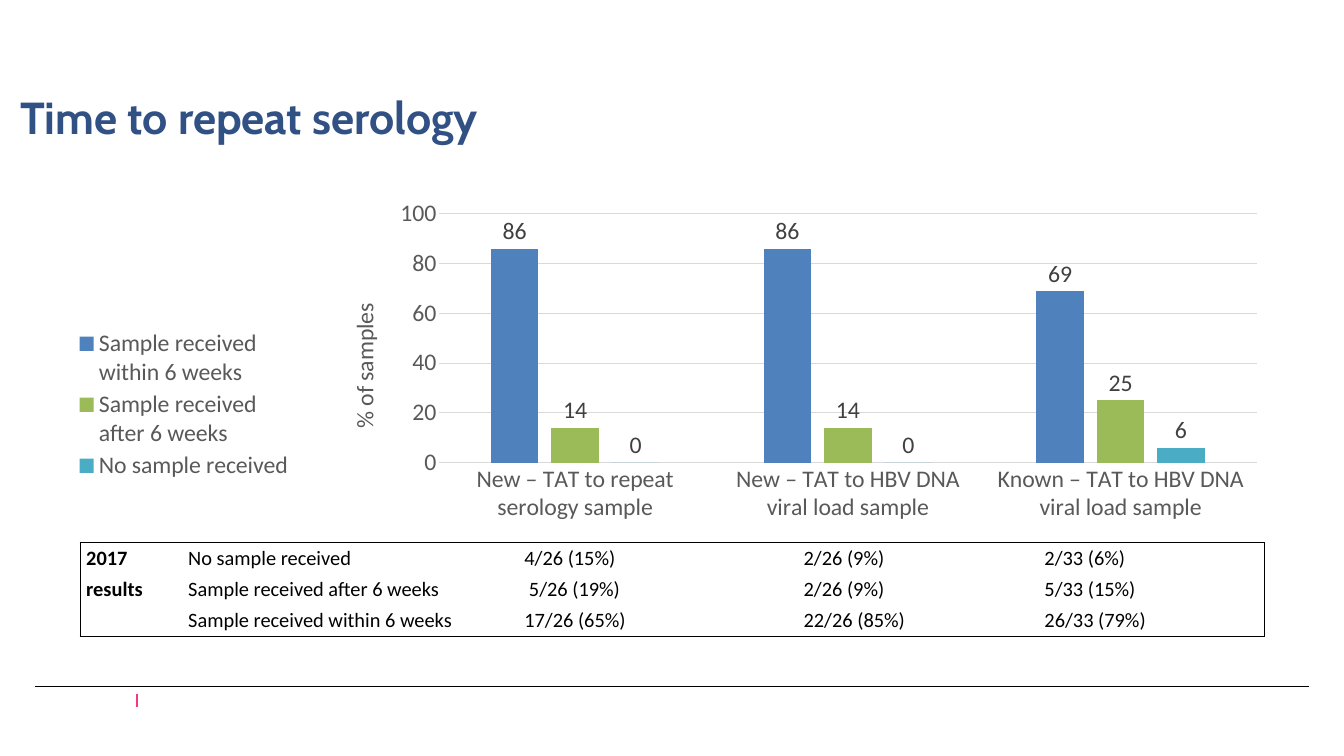
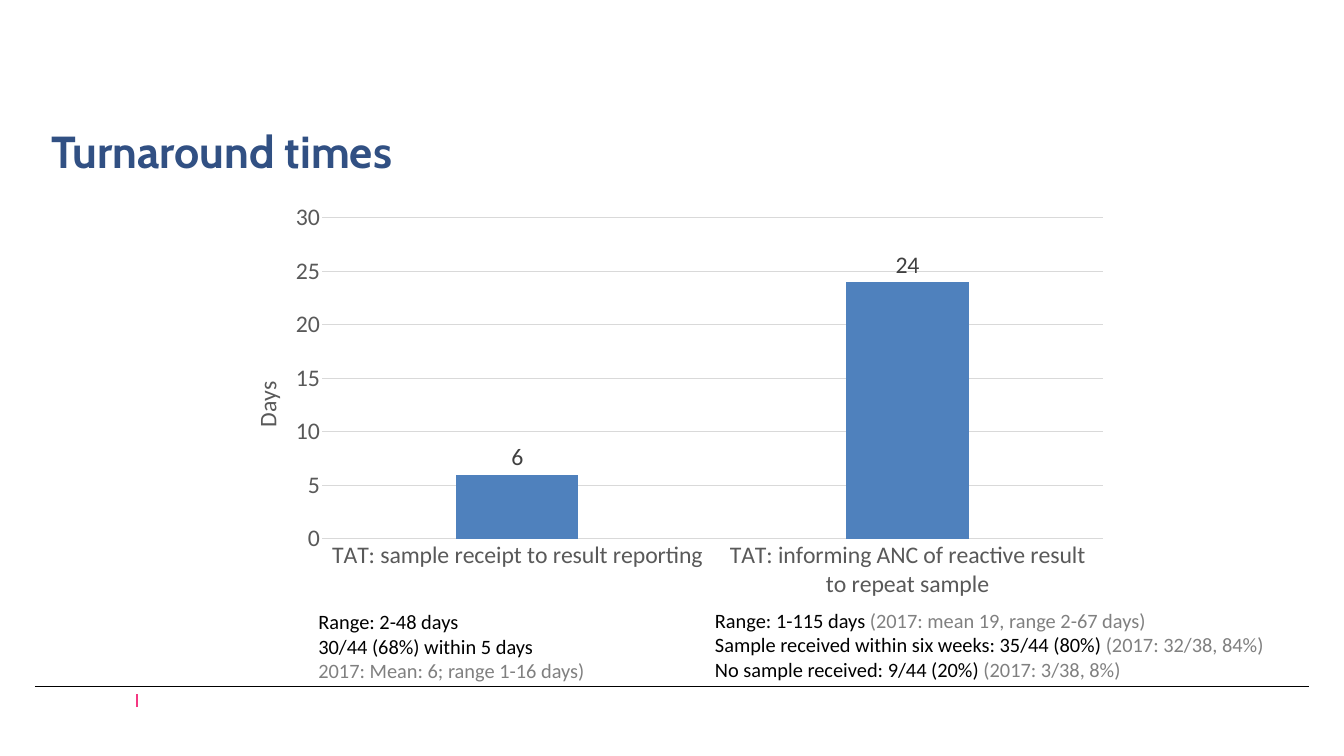
from lxml import etree
from pptx import Presentation
from pptx.chart.data import CategoryChartData
from pptx.dml.color import RGBColor
from pptx.enum.chart import XL_CHART_TYPE, XL_LABEL_POSITION, XL_LEGEND_POSITION, XL_TICK_MARK
from pptx.enum.shapes import MSO_CONNECTOR
from pptx.enum.text import MSO_ANCHOR, MSO_AUTO_SIZE, PP_ALIGN
from pptx.oxml import parse_xml
from pptx.oxml.ns import nsdecls, qn
from pptx.util import Inches, Pt

COLUMN_CHART = XL_CHART_TYPE.COLUMN_CLUSTERED
OUTSIDE_END = XL_LABEL_POSITION.OUTSIDE_END
LEGEND_LEFT = XL_LEGEND_POSITION.LEFT
NO_TICKS = XL_TICK_MARK.NONE
STRAIGHT = MSO_CONNECTOR.STRAIGHT
TOP = MSO_ANCHOR.TOP
NO_AUTOFIT = MSO_AUTO_SIZE.NONE
LEFT = PP_ALIGN.LEFT

COLORS = {
    "title": "315083", "black": "000000", "white": "FFFFFF", "pink": "F43882",
    "axis": "595959", "label": "404040", "grid": "D9D9D9", "past": "808080",
    "blue": "4F81BD", "green": "9BBB59", "teal": "4BACC6",
}
RGB = {name: RGBColor.from_string(value) for name, value in COLORS.items()}
TITLE_FONT, BODY_FONT = "Cabin", "Calibri"
TITLE_SIZE, CHART_SIZE, TEXT_SIZE = 52.8, 28, 24

deck = Presentation()
deck.slide_width, deck.slide_height = Inches(21.99), Inches(12.37)
# The grid has 100 columns and 100 rows; every place below is in these units.
COL, ROW = deck.slide_width / 100, deck.slide_height / 100
TITLE_ONLY = deck.slide_layouts[5]


def style_font(font, size, color, bold=False, name=BODY_FONT):
    font.name, font.size, font.bold = name, Pt(size), bold
    font.color.rgb = RGB[color]


def place_in_chart(element, **shares):
    """Give a chart part a fixed place, as shares of the chart's size."""
    for old in element.findall(qn("c:layout")):
        element.remove(old)
    target = '<c:layoutTarget val="inner"/>' if element.tag == qn("c:plotArea") else ""
    modes = "".join(f'<c:{axis}Mode val="edge"/>' for axis in "xy")
    values = "".join(f'<c:{key} val="{value}"/>' for key, value in shares.items())
    layout = parse_xml(f'<c:layout {nsdecls("c")}><c:manualLayout>{target}{modes}{values}'
                       "</c:manualLayout></c:layout>")
    overlay = element.find(qn("c:overlay"))
    if overlay is None:
        element.insert(0, layout)
    else:
        overlay.addprevious(layout)


FOOTER_LINES = [
    ((2.59, 90.7), (97.36, 90.7), "black", 0.41),
    ((10.19, 93.53), (10.19, 91.84), "pink", 1.65),
]
SLIDES = [
    {
        "title": "Time to repeat serology",
        "title_at": (1.5, 11.8, 98.32, 16.57),
        "chart_at": (4.5, 25.79, 91.68, 50.93),
        "categories": ["New – TAT to repeat serology sample",
                       "New – TAT to HBV DNA viral load sample",
                       "Known – TAT to HBV DNA viral load sample"],
        "series": [("Sample received within 6 weeks", (86, 86, 69), "blue"),
                   ("Sample received after 6 weeks", (14, 14, 25), "green"),
                   ("No sample received", (0, 0, 6), "teal")],
        "axis": ("% of samples", 100, 20),
        "axis_title_at": {"x": 0.23, "y": 0.27},
        "plot_at": {"x": 0.307, "y": 0.049, "w": 0.664, "h": 0.646},
        "legend_at": {"x": 0.01, "y": 0.34, "w": 0.18, "h": 0.41},
    },
    {
        "title": "Turnaround times",
        "title_at": (3.82, 16.33, 89.5, 13.58),
        "chart_at": (16.64, 25.79, 66.67, 54.41),
        "categories": ["TAT: sample receipt to result reporting",
                       "TAT: informing ANC of reactive result to repeat sample"],
        "series": [("Series 1", (6, 24), "blue")],
        "axis": ("Days", 30, 5),
        "axis_title_at": {"x": 0.026, "y": 0.443},
        "plot_at": {"x": 0.11, "y": 0.055, "w": 0.871, "h": 0.781},
        "legend_at": None,
    },
]

pages = []
for content in SLIDES:
    page = deck.slides.add_slide(TITLE_ONLY)
    pages.append(page)

    for (x1, y1), (x2, y2), color, width in FOOTER_LINES:
        line = page.shapes.add_connector(STRAIGHT, int(x1 * COL), int(y1 * ROW),
                                         int(x2 * COL), int(y2 * ROW))
        line.line.color.rgb, line.line.width = RGB[color], Pt(width)
        etree.SubElement(line._element.spPr, qn("a:effectLst"))

    title = page.shapes.title
    left, top, width, height = content["title_at"]
    title.left, title.top = int(left * COL), int(top * ROW)
    title.width, title.height = int(width * COL), int(height * ROW)
    frame = title.text_frame
    frame.text = content["title"]
    frame.margin_left = frame.margin_top = frame.margin_right = frame.margin_bottom = 0
    frame.vertical_anchor, frame.auto_size, frame.word_wrap = TOP, NO_AUTOFIT, True
    frame.paragraphs[0].alignment = LEFT
    style_font(frame.paragraphs[0].runs[0].font, TITLE_SIZE, "title", True, TITLE_FONT)

    data = CategoryChartData()
    data.categories = content["categories"]
    for name, values, color in content["series"]:
        data.add_series(name, values)
    left, top, width, height = content["chart_at"]
    chart = page.shapes.add_chart(COLUMN_CHART, int(left * COL), int(top * ROW),
                                  int(width * COL), int(height * ROW), data).chart
    chart.has_title = False
    style_font(chart.font, CHART_SIZE, "axis")

    plot = chart.plots[0]
    plot.gap_width, plot.overlap, plot.vary_by_categories = 219, -27, False
    for series, (name, values, color) in zip(plot.series, content["series"]):
        series.format.fill.solid()
        series.format.fill.fore_color.rgb = RGB[color]
        series.invert_if_negative = False
        labels = series.data_labels
        labels.show_value, labels.position = True, OUTSIDE_END
        style_font(labels.font, CHART_SIZE, "label")

    for axis in (chart.category_axis, chart.value_axis):
        axis.major_tick_mark = axis.minor_tick_mark = NO_TICKS
        style_font(axis.tick_labels.font, CHART_SIZE, "axis")
    value_axis = chart.value_axis
    axis_name, value_axis.maximum_scale, value_axis.major_unit = content["axis"]
    value_axis.minimum_scale = 0
    value_axis.format.line.fill.background()
    for rule in (chart.category_axis.format.line, value_axis.major_gridlines.format.line):
        rule.color.rgb, rule.width = RGB["grid"], Pt(0.75)

    axis_title = value_axis.axis_title
    axis_title.text_frame.text = axis_name
    style_font(axis_title.text_frame.paragraphs[0].runs[0].font, CHART_SIZE, "axis")
    axis_title.text_frame._txBody.bodyPr.set("rot", "-5400000")
    axis_title.text_frame._txBody.bodyPr.set("vert", "horz")
    place_in_chart(axis_title._element, **content["axis_title_at"])
    place_in_chart(chart._chartSpace.chart.plotArea, **content["plot_at"])

    chart.has_legend = content["legend_at"] is not None
    if chart.has_legend:
        legend = chart.legend
        legend.position, legend.include_in_layout = LEGEND_LEFT, False
        style_font(legend.font, CHART_SIZE, "axis")
        place_in_chart(legend._element, **content["legend_at"])

serology_page, turnaround_page = pages

# Results of 2017, framed by one outer border
RESULTS = [
    ["2017", "No sample received", "4/26 (15%)", "2/26 (9%)", "2/33 (6%)"],
    ["results", "Sample received after 6 weeks", " 5/26 (19%)", "2/26 (9%)", "5/33 (15%)"],
    ["", "Sample received within 6 weeks", "17/26 (65%)", "22/26 (85%)", "26/33 (79%)"],
]
COLUMN_WIDTHS = [7.59, 25.01, 20.78, 17.92, 16.83]
ROW_HEIGHT = 4.12
last_row, last_column = len(RESULTS) - 1, len(COLUMN_WIDTHS) - 1
table = serology_page.shapes.add_table(
    len(RESULTS), len(COLUMN_WIDTHS), int(5.96 * COL), int(71.79 * ROW),
    int(sum(COLUMN_WIDTHS) * COL), int(len(RESULTS) * ROW_HEIGHT * ROW)).table
table.first_row = table.horz_banding = False
for column, width in zip(table.columns, COLUMN_WIDTHS):
    column.width = int(width * COL)
for r, texts in enumerate(RESULTS):
    table.rows[r].height = int(ROW_HEIGHT * ROW)
    for c, text in enumerate(texts):
        cell = table.cell(r, c)
        cell.text = text
        style_font(cell.text_frame.paragraphs[0].font, TEXT_SIZE, "black", c == 0)
        for span in cell.text_frame.paragraphs[0].runs:
            style_font(span.font, TEXT_SIZE, "black", c == 0)
        cell.fill.solid()
        cell.fill.fore_color.rgb = RGB["white"]
        on_edge = {"lnL": c == 0, "lnR": c == last_column, "lnT": r == 0, "lnB": r == last_row}
        for position, (side, drawn) in enumerate(on_edge.items()):
            paint = (f'<a:solidFill><a:srgbClr val="{COLORS["black"]}"/></a:solidFill>'
                     if drawn else "<a:noFill/>")
            border = parse_xml(f'<a:{side} {nsdecls("a")} w="{Pt(1)}">{paint}</a:{side}>')
            cell._tc.get_or_add_tcPr().insert(position, border)

# Notes under the two columns: current figures in black, those of 2017 in grey
NOTES = [
    ((23.24, 80.19, 22, 10.59), [
        [("Range: 2-48 days", "black")],
        [("30/44 (68%) within 5 days", "black")],
        [("2017: Mean: 6; range 1-16 days)", "past")],
    ]),
    ((52.75, 80.03, 43.66, 10.59), [
        [("Range: 1-115 days ", "black"), ("(2017: mean 19, range 2-67 days)", "past")],
        [("Sample received within six weeks: 35/44 (80%) ", "black"),
         ("(2017: 32/38, 84%)", "past")],
        [("No sample received: 9/44 (20%) ", "black"), ("(2017: 3/38, 8%)", "past")],
    ]),
]
for (left, top, width, height), lines in NOTES:
    box = turnaround_page.shapes.add_textbox(int(left * COL), int(top * ROW),
                                             int(width * COL), int(height * ROW))
    frame = box.text_frame
    frame.word_wrap = True
    frame.text = "\n".join("".join(text for text, color in parts) for parts in lines)
    for para, parts in zip(frame.paragraphs, lines):
        para.runs[0].text = parts[0][0]
        for text, color in parts[1:]:
            para.add_run().text = text
        for span, (text, color) in zip(para.runs, parts):
            style_font(span.font, TEXT_SIZE, color)

deck.save("out.pptx")
